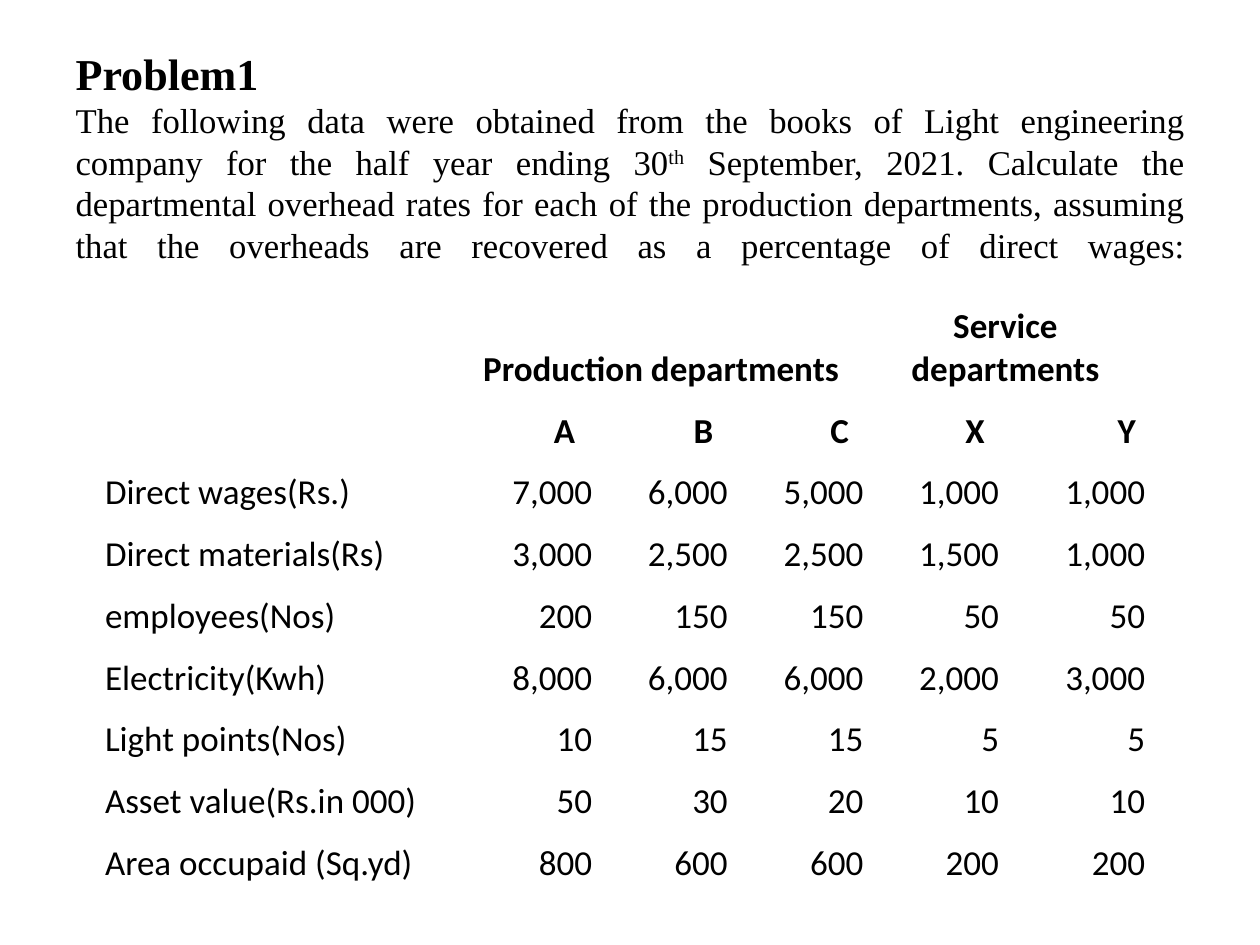
from pptx import Presentation, util as u
from pptx.dml.color import RGBColor
from pptx.enum import text

Pt = u.Pt
LEFT, CENTER, RIGHT = text.PP_ALIGN.LEFT, text.PP_ALIGN.CENTER, text.PP_ALIGN.RIGHT
INK = "000000"
PROBLEM = [
    ("Problem1", dict(size=Pt(25.2), bold=True)),
    ("\v", {}),
    ("The following data were obtained from the books of Light engineering "
     "company for the half year ending 30", {}),
    ("th", dict(raised="30000")),
    (" September, 2021. Calculate the departmental overhead rates for each of "
     "the production departments, assuming that the overheads are recovered "
     "as a percentage of direct wages:", {}),
    ("\v", {}),
]
GROUPS = [("Production departments", 1, 3), ("Service departments", 4, 5)]
DEPARTMENTS = [("A", 10.5), ("B", 9), ("C", 9), ("X", 9), ("Y", 6)]
FIGURES = [
    ("Direct wages(Rs.)", "7,000", "6,000", "5,000", "1,000", "1,000"),
    ("Direct materials(Rs)", "3,000", "2,500", "2,500", "1,500", "1,000"),
    ("employees(Nos)", "200", "150", "150", "50", "50"),
    ("Electricity(Kwh)", "8,000", "6,000", "6,000", "2,000", "3,000"),
    ("Light points(Nos)", "10", "15", "15", "5", "5"),
    ("Asset value(Rs.in 000)", "50", "30", "20", "10", "10"),
    ("Area occupaid (Sq.yd)", "800", "600", "600", "200", "200"),
]


def color(code):
    """Turn a hex string into a colour."""
    return RGBColor.from_string(code)


def set_all(target, values):
    """Set every attribute named in a dict of values."""
    for name, value in values.items():
        setattr(target, name, value)


def style_font(font, **values):
    """Apply font values and the ink colour."""
    set_all(font, values)
    font.color.rgb = color(INK)


def write_problem(title, left, top, width, height):
    """Place the problem statement in the title placeholder."""
    set_all(title, dict(left=Pt(left), top=Pt(top), width=Pt(width), height=Pt(height)))
    set_all(title.text_frame, dict(word_wrap=True, auto_size=text.MSO_AUTO_SIZE.NONE,
                                   vertical_anchor=text.MSO_ANCHOR.MIDDLE,
                                   margin_top=Pt(35)))
    statement = title.text_frame.paragraphs[0]
    set_all(statement, dict(alignment=text.PP_ALIGN.JUSTIFY, line_spacing=1.0,
                            space_before=Pt(0)))
    for words, look in PROBLEM:
        if words == "\v":
            statement.add_line_break()
            continue
        run = statement.add_run()
        run.text = words
        values = dict(name="Times New Roman", size=Pt(19.8), bold=False) | look
        raised = values.pop("raised", None)
        style_font(run.font, **values)
        if raised:
            run.font._element.set("baseline", raised)


def write_cell(cell, words, alignment, bold=False, right=0.72):
    """Write one line of text at the bottom of a table cell."""
    set_all(cell, dict(margin_left=Pt(0.72), margin_right=Pt(right), margin_top=Pt(0.72),
                       margin_bottom=Pt(0), vertical_anchor=text.MSO_ANCHOR.BOTTOM))
    line = cell.text_frame.paragraphs[0]
    line.alignment = alignment
    run = line.add_run()
    run.text = words
    style_font(run.font, name="Calibri", size=Pt(20), bold=bold)


def add_departments(slide, left, top, label_width, widths, row_height):
    """Add the table of figures for each department."""
    columns = [label_width, *widths]
    rows = len(FIGURES) + 2
    table = slide.shapes.add_table(rows, len(columns), Pt(left), Pt(top),
                                   Pt(sum(columns)), Pt(rows * row_height)).table
    set_all(table, dict(first_row=False, horz_banding=False))
    for column, width in zip(table.columns, columns):
        column.width = Pt(width)
    for row in table.rows:
        row.height = Pt(row_height)
    for cell in table.iter_cells():
        cell.fill.background()
    for heading, first, last in GROUPS:
        table.cell(0, first).merge(table.cell(0, last))
        write_cell(table.cell(0, first), heading, CENTER, bold=True)
    for c, (department, inset) in enumerate(DEPARTMENTS, 1):
        write_cell(table.cell(1, c), department, RIGHT, bold=True, right=inset)
    for r, figures in enumerate(FIGURES, 2):
        for c, figure in enumerate(figures):
            write_cell(table.cell(r, c), figure, RIGHT if c else LEFT)


def main():
    """Build the slide and save it."""
    deck = Presentation()
    set_all(deck, dict(slide_width=Pt(720), slide_height=Pt(540)))
    slide = deck.slides.add_slide(deck.slide_layouts[5])
    write_problem(slide.shapes.title, 36, 31.7, 648, 136)
    add_departments(slide, 59.3, 173.6, 202.3, [77.5] * 4 + [83.5], 35.3)
    deck.save("out.pptx")


if __name__ == "__main__":
    main()
